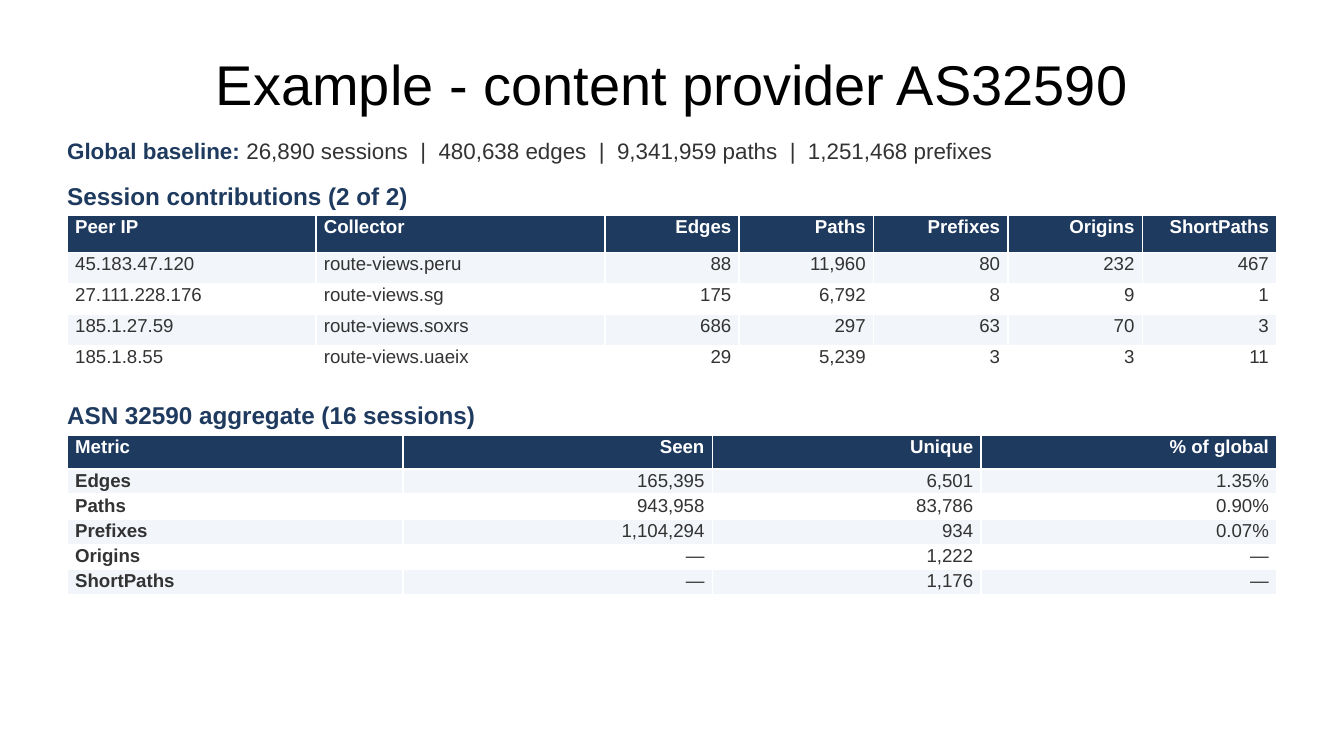
import pptx
import pptx.dml.color
import pptx.enum.text
import pptx.util

RGBColor = pptx.dml.color.RGBColor
NAVY = RGBColor(0x1F, 0x3A, 0x5F)
GREY = RGBColor(0x33, 0x33, 0x33)
PALE = RGBColor(0xF2, 0xF5, 0xF9)
WHITE = RGBColor(0xFF, 0xFF, 0xFF)
BLACK = RGBColor(0x00, 0x00, 0x00)

GRID = pptx.util.Inches(0.1)  # the slide is 100 columns by 56.25 rows
LEFT, WIDTH = 5, 90

SESSIONS = [
    ("Peer IP", "Collector", "Edges", "Paths", "Prefixes", "Origins", "ShortPaths"),
    ("45.183.47.120", "route-views.peru", "88", "11,960", "80", "232", "467"),
    ("27.111.228.176", "route-views.sg", "175", "6,792", "8", "9", "1"),
    ("185.1.27.59", "route-views.soxrs", "686", "297", "63", "70", "3"),
    ("185.1.8.55", "route-views.uaeix", "29", "5,239", "3", "3", "11"),
]
AGGREGATE = [
    ("Metric", "Seen", "Unique", "% of global"),
    ("Edges", "165,395", "6,501", "1.35%"),
    ("Paths", "943,958", "83,786", "0.90%"),
    ("Prefixes", "1,104,294", "934", "0.07%"),
    ("Origins", "—", "1,222", "—"),
    ("ShortPaths", "—", "1,176", "—"),
]


def grid(*units):
    return [round(u * GRID) for u in units]


class Deck:
    """Holds the style and the current slide; lengths are grid units."""

    font = "Arial"
    title_size, heading_size, body_size, cell_size = 30, 13, 12, 10

    def __init__(self, prs):
        self.s = prs.slides.add_slide(prs.slide_layouts.get_by_name("Title Only"))

    def style(self, r, size, color, bold=False):
        r.font.name = self.font
        r.font.size = pptx.util.Pt(size)
        r.font.color.rgb = color
        r.font.bold = bold

    def title(self, text, top, height):
        sp = self.s.shapes.title
        sp.left, sp.top, sp.width, sp.height = grid(LEFT, top, WIDTH, height)
        tf = sp.text_frame
        tf.text = text
        tf.vertical_anchor = pptx.enum.text.MSO_ANCHOR.MIDDLE
        p = tf.paragraphs[0]
        p.alignment = pptx.enum.text.PP_ALIGN.CENTER
        self.style(p.runs[0], self.title_size, BLACK)

    def line(self, top, height, size, label, detail=""):
        """Add one line of text: a bold label, then optional plain detail."""
        sp = self.s.shapes.add_textbox(*grid(LEFT, top, WIDTH, height))
        tf = sp.text_frame
        tf.word_wrap = True
        tf.auto_size = pptx.enum.text.MSO_AUTO_SIZE.SHAPE_TO_FIT_TEXT
        tf.margin_left = tf.margin_top = tf.margin_right = tf.margin_bottom = 0
        p = tf.paragraphs[0]
        p.text = label
        self.style(p.runs[0], size, NAVY, True)
        if detail:
            r = p.add_run()
            r.text = detail
            self.style(r, size, GREY)

    def heading(self, text, top):
        self.line(top, 2.4, self.heading_size, text)

    def table(self, rows, top, height, header, widths, text_columns, bold_first=False):
        """Add a striped table; columns after text_columns align right."""
        frame = self.s.shapes.add_table(
            len(rows), len(widths), *grid(LEFT, top, WIDTH, height))
        table = frame.table
        for column, width in zip(table.columns, widths):
            column.width, = grid(width)
        body = (height - header) / (len(rows) - 1)
        for i, values in enumerate(rows):
            table.rows[i].height, = grid(body if i else header)
            fill = (PALE if i % 2 else WHITE) if i else NAVY
            for j, value in enumerate(values):
                bold = i == 0 or (bold_first and j == 0)
                self.cell(table.cell(i, j), value, fill, GREY if i else WHITE,
                          bold, j >= text_columns)

    def cell(self, cell, text, fill, color, bold, right):
        cell.fill.solid()
        cell.fill.fore_color.rgb = fill
        cell.margin_left = cell.margin_right = pptx.util.Inches(0.06)
        cell.margin_top = cell.margin_bottom = pptx.util.Inches(0.01)
        cell.text_frame.text = text
        p = cell.text_frame.paragraphs[0]
        if right:
            p.alignment = pptx.enum.text.PP_ALIGN.RIGHT
        self.style(p.runs[0], self.cell_size, color, bold)


def main():
    prs = pptx.Presentation()
    prs.slide_width, prs.slide_height = grid(100, 56.25)
    deck = Deck(prs)
    deck.title("Example - content provider AS32590", 2.3, 7.7)
    deck.line(10.2, 2.8, deck.body_size, "Global baseline: ",
              "26,890 sessions  |  480,638 edges  |  9,341,959 paths  |  "
              "1,251,468 prefixes")
    deck.heading("Session contributions (2 of 2)", 13.5)
    deck.table(SESSIONS, 16, 12, 2.8, [18.5, 21.5] + [10] * 5, text_columns=2)
    deck.heading("ASN 32590 aggregate (16 sessions)", 29.8)
    deck.table(AGGREGATE, 32.4, 11.8, 2.5, [25, 23, 20, 22], text_columns=1,
               bold_first=True)
    prs.save("out.pptx")


if __name__ == "__main__":
    main()
